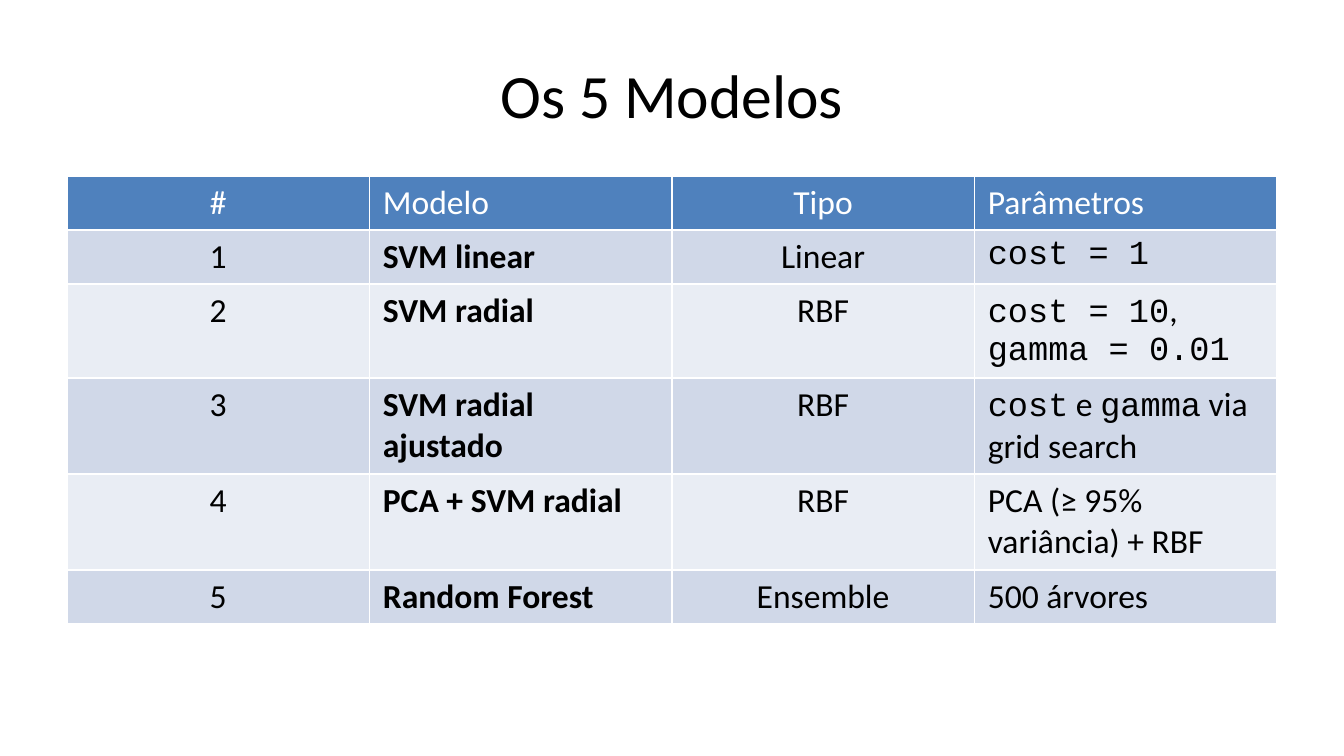
from pptx import Presentation
from pptx import util as u
from pptx.dml.color import RGBColor
from pptx.enum import text

PX = 914400 / 134.4  # EMU per px

THEME = {
    "body_font": "Calibri",
    "code_font": "Courier New",
    "title_size": 33,
    "table_size": 18,
    "ink": "000000",
    "header_ink": "FFFFFF",
    "header_fill": "4F81BD",
    "band_fills": ("D0D8E8", "E9EDF4"),
}


def px(length):
    return u.Emu(round(length * PX))


def write(frame, words, size=THEME["table_size"], color=THEME["ink"],
          bold=False, centered=False):
    """Fill a text frame; words between backticks are set in the code font."""
    paragraph = frame.paragraphs[0]
    paragraph.alignment = text.PP_ALIGN.CENTER if centered else text.PP_ALIGN.LEFT
    for index, part in enumerate(words.split("`")):
        if not part:
            continue
        run = paragraph.add_run()
        run.text = part
        run.font.name = THEME["code_font" if index % 2 else "body_font"]
        run.font.size = u.Pt(size)
        run.font.bold = bold
        run.font.color.rgb = RGBColor.from_string(color)


presentation = Presentation()
presentation.slide_width = px(1344)
presentation.slide_height = px(756)
slide = presentation.slides.add_slide(presentation.slide_layouts[6])

LEFT, WIDTH = 67, 1210

# Title
title = slide.shapes.add_textbox(px(LEFT), px(31), px(WIDTH), px(126))
title.text_frame.word_wrap = True
title.text_frame.vertical_anchor = text.MSO_ANCHOR.MIDDLE
write(title.text_frame, "Os 5 Modelos", size=THEME["title_size"], centered=True)

# Table of models
rows = [
    ("#", "Modelo", "Tipo", "Parâmetros"),
    ("1", "SVM linear", "Linear", "`cost = 1`"),
    ("2", "SVM radial", "RBF", "`cost = 10`, `gamma = 0.01`"),
    ("3", "SVM radial ajustado", "RBF", "`cost` e `gamma` via grid search"),
    ("4", "PCA + SVM radial", "RBF", "PCA (≥ 95% variância) + RBF"),
    ("5", "Random Forest", "Ensemble", "500 árvores"),
]
row_heights = [54, 54, 94, 96, 96, 54]
CENTERED_COLUMNS = (0, 2)
MODEL_COLUMN = 1

table = slide.shapes.add_table(
    len(rows), len(rows[0]), px(LEFT), px(176), px(WIDTH), px(sum(row_heights))
).table

for row_index, (row, height) in enumerate(zip(rows, row_heights)):
    table.rows[row_index].height = px(height)
    is_header = row_index == 0
    fill = THEME["header_fill"] if is_header else THEME["band_fills"][(row_index - 1) % 2]
    for column_index, words in enumerate(row):
        cell = table.cell(row_index, column_index)
        cell.fill.solid()
        cell.fill.fore_color.rgb = RGBColor.from_string(fill)
        write(
            cell.text_frame,
            words,
            color=THEME["header_ink" if is_header else "ink"],
            bold=column_index == MODEL_COLUMN and not is_header,
            centered=column_index in CENTERED_COLUMNS,
        )

presentation.save("out.pptx")
